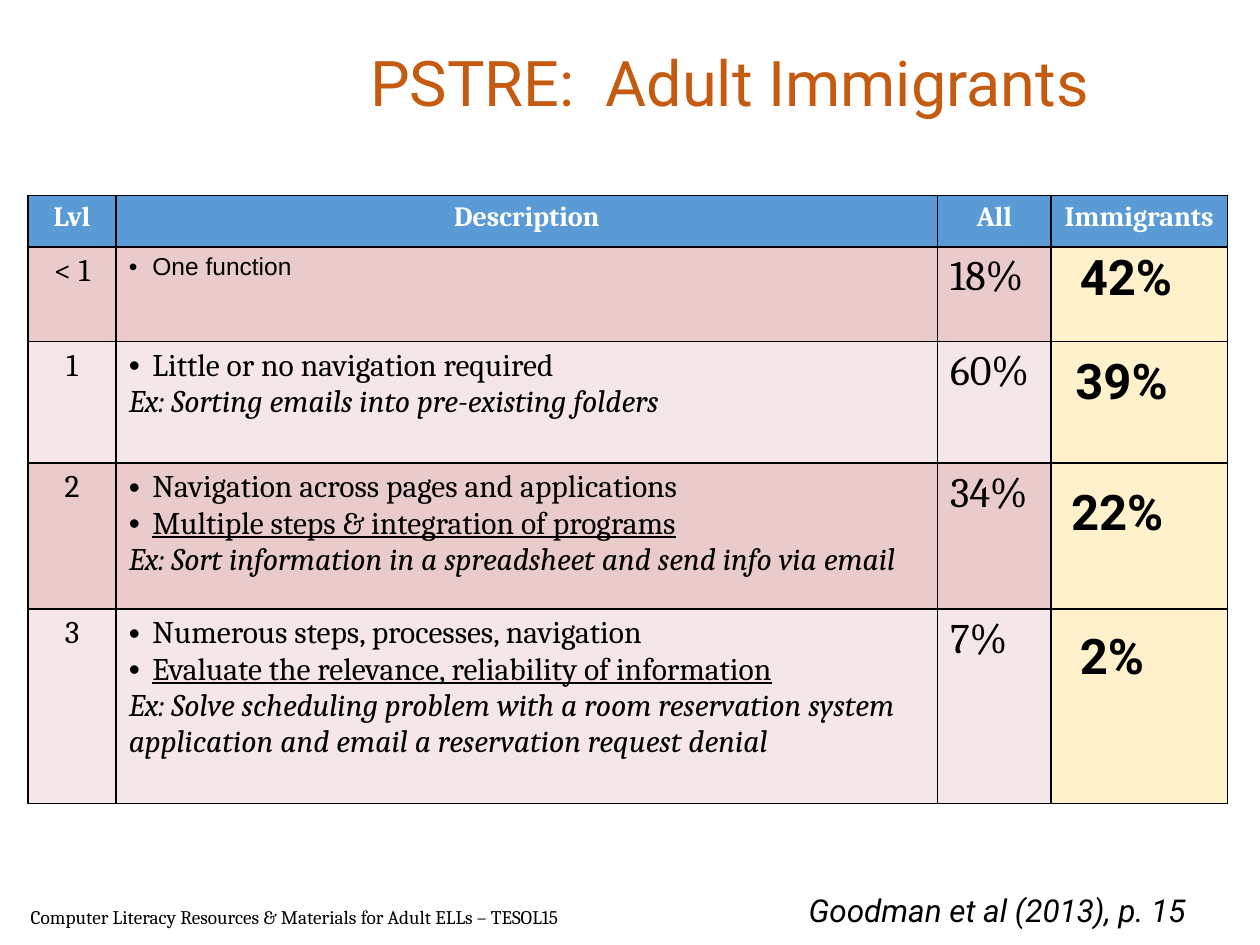
from dataclasses import dataclass

from lxml import etree
from pptx import Presentation
from pptx.dml.color import RGBColor as RGB
from pptx.enum.text import MSO_ANCHOR as Anchor, MSO_AUTO_SIZE as AutoSize, PP_ALIGN as Align
from pptx.oxml.ns import qn
from pptx.util import Pt


@dataclass(frozen=True)
class Theme:
    sans: str = "Roboto"
    serif: str = "Cambria"
    plain: str = "Arial"
    black: RGB = RGB(0, 0, 0)
    white: RGB = RGB(255, 255, 255)
    orange: RGB = RGB(0xC5, 0x5A, 0x11)
    header: RGB = RGB(0x5B, 0x9B, 0xD5)
    bands: tuple = (RGB(0xEA, 0xCB, 0xCB), RGB(0xF5, 0xE7, 0xE7))
    highlight: RGB = RGB(0xFF, 0xF1, 0xCC)
    title_size: int = 36
    immigrant_size: int = 28
    share_size: int = 24
    body_size: int = 18
    header_size: int = 16
    small_size: int = 14
    footer_size: int = 11


THEME = Theme()

HEADINGS = ["Lvl", "Description", "All", "Immigrants"]
COLUMN_WIDTHS = [50.4, 469.4, 64.8, 100.8]
ROW_HEIGHTS = [29.5, 54, 69.5, 83.5, 111]

# Level, bullets, underlined bullet, example, share of all adults
LEVELS = [
    ("< 1", "One function", None, None, "18%"),
    ("1", "Little or no navigation required", None,
     "Ex: Sorting emails into pre-existing folders", "60%"),
    ("2", "Navigation across pages and applications",
     "Multiple steps & integration of programs",
     "Ex: Sort information in a spreadsheet and send info via email", "34%"),
    ("3", "Numerous steps, processes, navigation",
     "Evaluate the relevance, reliability of information",
     "Ex: Solve scheduling problem with a room reservation system "
     "application and email a reservation request denial", "7%"),
]

# Share of immigrants, left, top
IMMIGRANT_SHARES = [
    ("42%", 610, 137.5),
    ("39%", 607.5, 196.5),
    ("22%", 605, 271.5),
    ("2%", 610, 354),
]


def style(paragraph, size, name=THEME.serif, color=THEME.black, bold=False,
          italic=False, underline=False, align=Align.LEFT):
    paragraph.alignment = align
    font = paragraph.font
    font.size, font.name = Pt(size), name
    font.bold, font.italic, font.underline = bold, italic, underline
    font.color.rgb = color


def add_bullet(paragraph):
    properties = paragraph._p.get_or_add_pPr()
    properties.set("marL", str(Pt(13.5)))
    properties.set("indent", str(-Pt(13.5)))
    etree.SubElement(properties, qn("a:buFont"), typeface="Arial")
    etree.SubElement(properties, qn("a:buChar"), char="•")


def add_text(slide, text, left, top, width, height, size,
             anchor=Anchor.TOP, grow=False, **look):
    box = slide.shapes.add_textbox(Pt(left), Pt(top), Pt(width), Pt(height))
    frame = box.text_frame
    frame.word_wrap = True
    frame.vertical_anchor = anchor
    if grow:
        frame.auto_size = AutoSize.SHAPE_TO_FIT_TEXT
    paragraph = frame.paragraphs[0]
    paragraph.text = text
    style(paragraph, size, **look)


def format_cell(cell, color):
    cell.fill.solid()
    cell.fill.fore_color.rgb = color
    properties = cell._tc.get_or_add_tcPr()
    for index, side in enumerate(("lnL", "lnR", "lnT", "lnB")):
        line = etree.Element(qn(f"a:{side}"), w=str(Pt(1)))
        fill = etree.SubElement(line, qn("a:solidFill"))
        etree.SubElement(fill, qn("a:srgbClr"), val=str(THEME.black))
        properties.insert(index, line)


def fill_cell(cell, text, size, **look):
    paragraph = cell.text_frame.paragraphs[0]
    paragraph.text = text
    style(paragraph, size, **look)


def fill_description(cell, bullet, underlined, example):
    frame = cell.text_frame
    short = example is None
    size = THEME.small_size if short else THEME.body_size
    name = THEME.plain if short else THEME.serif
    lines = [line for line in (bullet, underlined, example) if line]
    for index, line in enumerate(lines):
        paragraph = frame.add_paragraph() if index else frame.paragraphs[0]
        paragraph.text = line
        if line != example:
            add_bullet(paragraph)
        style(paragraph, size, name, italic=line == example,
              underline=line == underlined)


def add_level_table(slide):
    table = slide.shapes.add_table(
        len(ROW_HEIGHTS), len(COLUMN_WIDTHS), Pt(16), Pt(111.6),
        Pt(sum(COLUMN_WIDTHS)), Pt(sum(ROW_HEIGHTS))).table
    for column, width in zip(table.columns, COLUMN_WIDTHS):
        column.width = Pt(width)
    for row, height in zip(table.rows, ROW_HEIGHTS):
        row.height = Pt(height)

    # Header row
    for column, heading in enumerate(HEADINGS):
        cell = table.cell(0, column)
        format_cell(cell, THEME.header)
        fill_cell(cell, heading, THEME.header_size, color=THEME.white,
                  bold=True, align=Align.CENTER)

    # One row for each level; the last column is left for the large shares
    for row, (level, bullet, underlined, example, share) in enumerate(LEVELS, 1):
        band = THEME.bands[(row - 1) % 2]
        cells = [table.cell(row, column) for column in range(len(HEADINGS))]
        for cell, color in zip(cells, [band] * 3 + [THEME.highlight]):
            format_cell(cell, color)
        fill_cell(cells[0], level, THEME.body_size, align=Align.CENTER)
        fill_description(cells[1], bullet, underlined, example)
        fill_cell(cells[2], share, THEME.share_size)


def main():
    presentation = Presentation()
    presentation.slide_width, presentation.slide_height = Pt(720), Pt(540)
    slide = presentation.slides.add_slide(presentation.slide_layouts[6])

    # Title and citation
    add_text(slide, "PSTRE:  Adult Immigrants", 150, 1.5, 534, 90,
             THEME.title_size, anchor=Anchor.MIDDLE, name=THEME.sans,
             color=THEME.orange, align=Align.CENTER)
    add_text(slide, "Goodman et al (2013), p. 15", 455, 505.5, 246, 29,
             THEME.body_size, name=THEME.sans, italic=True)

    # Table with the immigrant shares over its last column
    add_level_table(slide)
    for share, left, top in IMMIGRANT_SHARES:
        add_text(slide, share, left, top, 91.5, 41, THEME.immigrant_size,
                 grow=True, name=THEME.sans, bold=True)

    # Footer
    add_text(slide, "Computer Literacy Resources & Materials for Adult ELLs – TESOL15",
             10.5, 514, 338.5, 25, THEME.footer_size)

    presentation.save("out.pptx")


if __name__ == "__main__":
    main()
